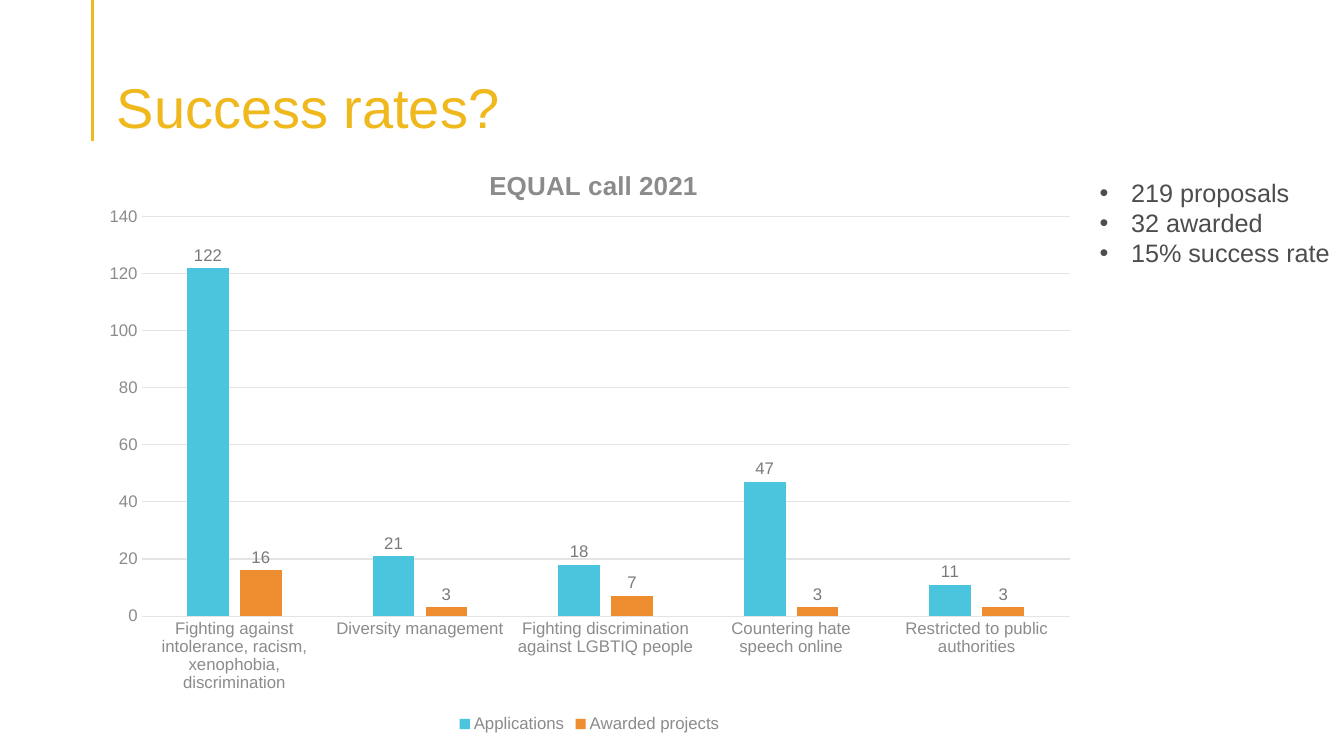
from dataclasses import dataclass

from lxml.etree import SubElement
from pptx import Presentation
from pptx.chart.data import CategoryChartData
from pptx.dml.color import RGBColor
from pptx.enum.chart import XL_CHART_TYPE, XL_LABEL_POSITION, XL_LEGEND_POSITION, XL_TICK_MARK
from pptx.enum.shapes import MSO_CONNECTOR
from pptx.enum.text import MSO_ANCHOR
from pptx.oxml.ns import qn
from pptx.util import Pt

FONT = "Arial"
GOLD, DARK, GREY, LABEL, GRID = "EFB81D", "4D4D4D", "8B8B8B", "7A7A7A", "E4E4E4"


@dataclass
class Series:
    name: str
    values: tuple[int, ...]
    color: str


CATEGORIES = (
    "Fighting against intolerance, racism, xenophobia, discrimination",
    "Diversity management",
    "Fighting discrimination against LGBTIQ people",
    "Countering hate speech online",
    "Restricted to public authorities",
)
SERIES = (
    Series("Applications", (122, 21, 18, 47, 11), "4BC5DE"),
    Series("Awarded projects", (16, 3, 7, 3, 3), "ED8D2F"),
)
FACTS = ("219 proposals", "32 awarded", "15% success rate")


def rgb(color: str) -> RGBColor:
    return RGBColor.from_string(color)


def style(font, size: float, color: str, bold: bool = False) -> None:
    font.name, font.size, font.bold = FONT, Pt(size), bold
    font.color.rgb = rgb(color)


def add_text(p, text: str, *, size: float, color: str, bold: bool = False,
             bullet: bool = False, spacing: float | None = None) -> None:
    if bullet:
        pPr = p._p.get_or_add_pPr()
        pPr.set("marL", str(Pt(22.5)))
        pPr.set("indent", str(Pt(-22.5)))
        SubElement(pPr, qn("a:buFont")).set("typeface", FONT)
        SubElement(pPr, qn("a:buChar")).set("char", "•")
    if spacing:
        p.line_spacing = spacing
    r = p.add_run()
    r.text = text
    style(r.font, size, color, bold)


def add_box(s, left: float, top: float, width: float, height: float):
    tf = s.shapes.add_textbox(Pt(left), Pt(top), Pt(width), Pt(height)).text_frame
    tf.word_wrap = True
    return tf


def place(parent, **fractions: float) -> None:
    """Set a manual layout, in fractions of the chart area."""
    layout = parent.find(qn("c:layout"))
    if layout is None:
        layout = SubElement(parent, qn("c:layout"))
        parent.insert(0, layout)
    manual = SubElement(layout, qn("c:manualLayout"))
    if "w" in fractions:
        SubElement(manual, qn("c:layoutTarget")).set("val", "inner")
    for axis in "xy":
        SubElement(manual, qn(f"c:{axis}Mode")).set("val", "edge")
    for key, value in fractions.items():
        SubElement(manual, qn(f"c:{key}")).set("val", str(value))


def format_line(line, color: str) -> None:
    line.color.rgb = rgb(color)
    line.width = Pt(0.75)


def add_call_chart(s) -> None:
    data = CategoryChartData()
    data.categories = CATEGORIES
    for item in SERIES:
        data.add_series(item.name, item.values)
    chart = s.shapes.add_chart(XL_CHART_TYPE.COLUMN_CLUSTERED, Pt(64), Pt(99.4),
                               Pt(714.3), Pt(427), data).chart
    style(chart.font, 10, DARK)

    # Chart title and plot area
    title = chart.chart_title
    add_text(title.text_frame.paragraphs[0], "EQUAL call 2021", size=18.6, color=GREY, bold=True)
    place(title._element, x=0.395, y=0.04)
    place(chart._chartSpace.chart.plotArea, x=0.052, y=0.13, w=0.928, h=0.668)

    # Axes
    for axis in (chart.category_axis, chart.value_axis):
        axis.major_tick_mark = axis.minor_tick_mark = XL_TICK_MARK.NONE
        style(axis.tick_labels.font, 12, GREY)
    format_line(chart.category_axis.format.line, GRID)
    values = chart.value_axis
    values.minimum_scale, values.maximum_scale, values.major_unit = 0, 140, 20
    values.format.line.fill.background()
    format_line(values.major_gridlines.format.line, GRID)

    # Columns and their labels
    plot = chart.plots[0]
    plot.vary_by_categories = False
    plot.gap_width, plot.overlap = 219, -27
    for series, item in zip(plot.series, SERIES):
        series.format.fill.solid()
        series.format.fill.fore_color.rgb = rgb(item.color)
        labels = series.data_labels
        labels.show_value = True
        labels.position = XL_LABEL_POSITION.OUTSIDE_END
        style(labels.font, 12, LABEL)

    # Legend
    chart.has_legend = True
    chart.legend.position = XL_LEGEND_POSITION.BOTTOM
    chart.legend.include_in_layout = False
    style(chart.legend.font, 12, GREY)


def main() -> None:
    prs = Presentation()
    prs.slide_width, prs.slide_height = Pt(960), Pt(540)
    s = prs.slides.add_slide(prs.slide_layouts[6])

    # Gold rule beside the title
    rule = s.shapes.add_connector(MSO_CONNECTOR.STRAIGHT, Pt(66.2), Pt(0), Pt(66.2), Pt(100.8))
    rule.line.color.rgb = rgb(GOLD)
    rule.line.width = Pt(2.25)
    SubElement(rule._element.spPr, qn("a:effectLst"))

    # Slide title
    tf = add_box(s, 76.3, 38.2, 828, 61.9)
    tf.vertical_anchor = MSO_ANCHOR.BOTTOM
    tf.margin_bottom = 0
    add_text(tf.paragraphs[0], "Success rates?", size=40, color=GOLD, spacing=0.9)

    add_call_chart(s)

    # Key figures
    tf = add_box(s, 778.3, 123.1, 181.7, 72.7)
    for i, fact in enumerate(FACTS):
        p = tf.add_paragraph() if i else tf.paragraphs[0]
        add_text(p, fact, size=18, color=DARK, bullet=True)

    prs.save("out.pptx")


if __name__ == "__main__":
    main()
